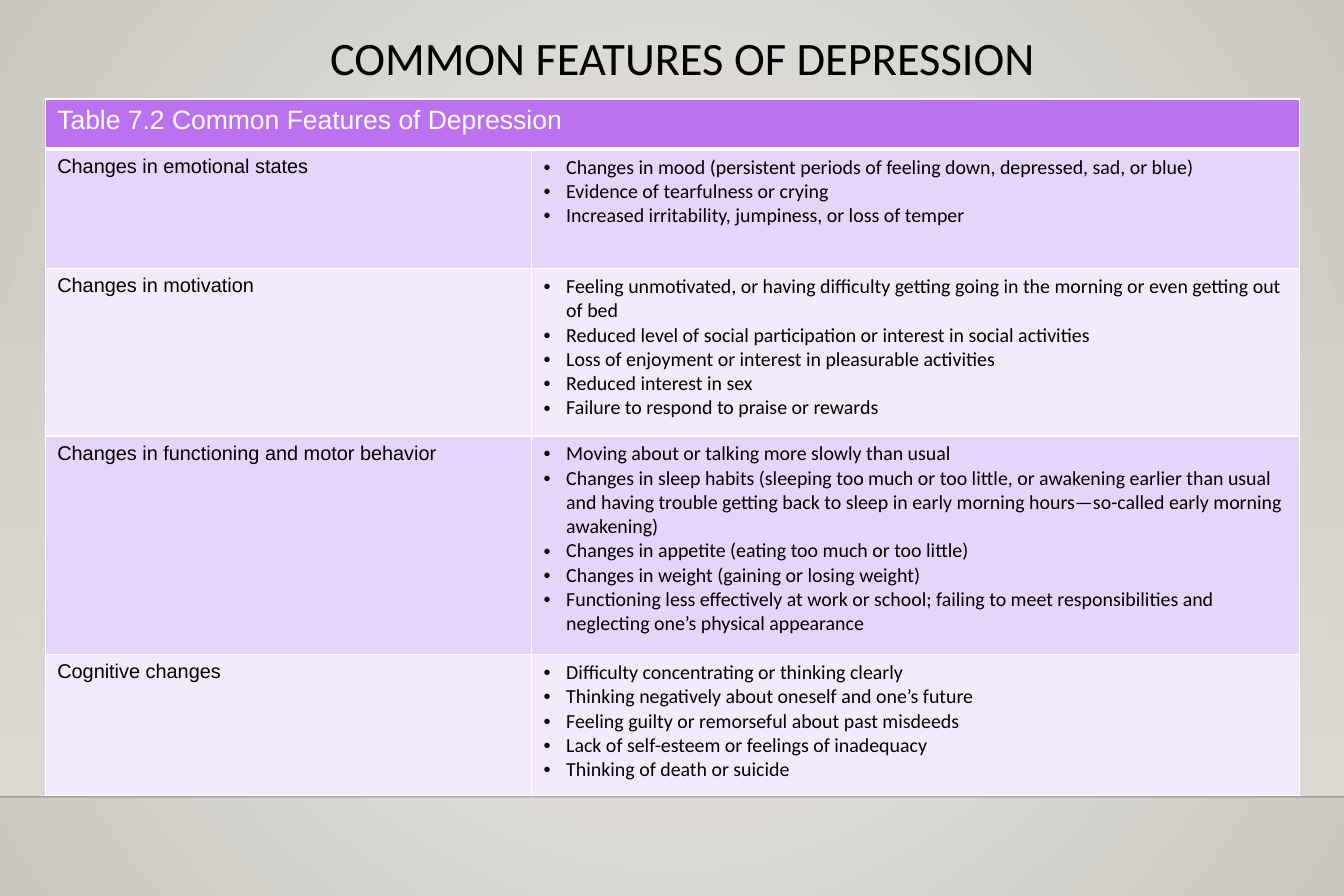
"""Build a slide with a table of the common features of depression."""
from dataclasses import dataclass

from lxml.etree import SubElement
from pptx import Presentation
from pptx.dml.color import RGBColor as RGB
from pptx.enum.shapes import MSO_CONNECTOR, MSO_SHAPE
from pptx.enum.text import MSO_ANCHOR, PP_ALIGN
from pptx.oxml import parse_xml
from pptx.oxml.ns import nsdecls, qn
from pptx.util import Inches, Pt


@dataclass(frozen=True)
class Theme:
    black: str = "000000"
    white: str = "FFFFFF"
    glow: str = "ECEAE7"
    edge: str = "CAC7C1"
    floor: str = "DFDBD5"
    header: str = "BC72F0"
    bands: tuple = ("E7D5F9", "F3EBFC")
    title_font: str = "Calibri"
    label_font: str = "Arial"
    title_size: int = 28
    header_size: int = 16
    body_size: int = 12


T = Theme()

FEATURES = [
    ("Changes in emotional states", 1, [
        "Changes in mood (persistent periods of feeling down, depressed, sad, or blue)",
        "Evidence of tearfulness or crying",
        "Increased irritability, jumpiness, or loss of temper",
    ]),
    ("Changes in motivation", 1.4, [
        "Feeling unmotivated, or having difficulty getting going in the morning or even getting out of bed",
        "Reduced level of social participation or interest in social activities",
        "Loss of enjoyment or interest in pleasurable activities",
        "Reduced interest in sex",
        "Failure to respond to praise or rewards",
    ]),
    ("Changes in functioning and motor behavior", 1.83, [
        "Moving about or talking more slowly than usual",
        "Changes in sleep habits (sleeping too much or too little, or awakening earlier than usual "
        "and having trouble getting back to sleep in early morning hours—so-called early morning awakening)",
        "Changes in appetite (eating too much or too little)",
        "Changes in weight (gaining or losing weight)",
        "Functioning less effectively at work or school; failing to meet responsibilities "
        "and neglecting one’s physical appearance",
    ]),
    ("Cognitive changes", 1.18, [
        "Difficulty concentrating or thinking clearly",
        "Thinking negatively about oneself and one’s future",
        "Feeling guilty or remorseful about past misdeeds",
        "Lack of self-esteem or feelings of inadequacy",
        "Thinking of death or suicide",
    ]),
]


def style_text(p, font, size, color=T.black):
    for r in p.runs:
        r.font.name = font
        r.font.size = Pt(size)
        r.font.bold = False
        r.font.color.rgb = RGB.from_string(color)


def style_cell(cell, fill, bottom=1):
    cell.fill.solid()
    cell.fill.fore_color.rgb = RGB.from_string(fill)
    tc_pr = cell._tc.get_or_add_tcPr()
    for i, (side, width) in enumerate(zip("LRTB", (1, 1, 1, bottom))):
        tc_pr.insert(i, parse_xml(
            f'<a:ln{side} {nsdecls("a")} w="{Pt(width)}"><a:solidFill>'
            f'<a:srgbClr val="{T.white}"/></a:solidFill></a:ln{side}>'))


prs = Presentation()
prs.slide_width, prs.slide_height = Inches(11.25), Inches(7.5)
s = prs.slides.add_slide(prs.slide_layouts[6])

bg = s.background.fill
bg.gradient()
for stop, color in zip(bg.gradient_stops, (T.glow, T.edge)):
    stop.color.rgb = RGB.from_string(color)
grad = s._element.find(".//" + qn("a:gradFill"))
grad.replace(grad.find(qn("a:lin")), parse_xml(
    f'<a:path {nsdecls("a")} path="circle">'
    '<a:fillToRect l="50000" t="50000" r="50000" b="50000"/></a:path>'))

wall = s.shapes.add_shape(MSO_SHAPE.RECTANGLE, 0, Inches(2.2), Inches(11.25), Inches(4.46))
wall.shadow.inherit = False
wall.line.fill.background()
wall.fill.gradient()
wall.fill.gradient_angle = 270
for stop in wall.fill.gradient_stops:
    stop.color.rgb = RGB.from_string(T.floor)
SubElement(wall._element.find(".//" + qn("a:srgbClr")), qn("a:alpha"), val="0")

horizon = s.shapes.add_connector(MSO_CONNECTOR.STRAIGHT, 0, Inches(6.67), Inches(11.25), Inches(6.67))
horizon.line.width = Pt(1)
horizon.line.color.rgb = RGB.from_string(T.black)
SubElement(horizon._element.find(".//" + qn("a:srgbClr")), qn("a:alpha"), val="20000")
SubElement(horizon._element.spPr, qn("a:effectLst"))

title = s.shapes.add_textbox(Inches(1.21), Inches(0.25), Inches(9), Inches(0.85))
tf = title.text_frame
tf.word_wrap = True
tf.vertical_anchor = MSO_ANCHOR.TOP
tf.text = "COMMON FEATURES OF DEPRESSION"
p = tf.paragraphs[0]
p.alignment = PP_ALIGN.CENTER
p.line_spacing = 0.9
style_text(p, T.title_font, T.title_size)

table = s.shapes.add_table(len(FEATURES) + 1, 2, Inches(0.38), Inches(0.83),
                           Inches(10.5), Inches(5.83)).table
for col, width in zip(table.columns, (4.07, 6.43)):
    col.width = Inches(width)

table.rows[0].height = Inches(0.42)
header = table.cell(0, 0)
header.merge(table.cell(0, 1))
header.text_frame.text = "Table 7.2 Common Features of Depression"
style_text(header.text_frame.paragraphs[0], T.label_font, T.header_size, T.white)
for cell in table.rows[0].cells:
    style_cell(cell, T.header, bottom=3)

for i, (label, height, items) in enumerate(FEATURES):
    row = table.rows[i + 1]
    row.height = Inches(height)
    name, details = row.cells
    for cell in (name, details):
        style_cell(cell, T.bands[i % 2])
    name.text_frame.text = label
    style_text(name.text_frame.paragraphs[0], T.label_font, T.body_size)
    details.text_frame.text = "\n".join(items)
    for p in details.text_frame.paragraphs:
        p_pr = p._p.get_or_add_pPr()
        p_pr.set("marL", str(Inches(0.19)))
        p_pr.set("indent", str(-Inches(0.19)))
        SubElement(p_pr, qn("a:buFont"), typeface=T.label_font)
        SubElement(p_pr, qn("a:buChar"), char="•")
        style_text(p, T.title_font, T.body_size)

prs.save("out.pptx")
